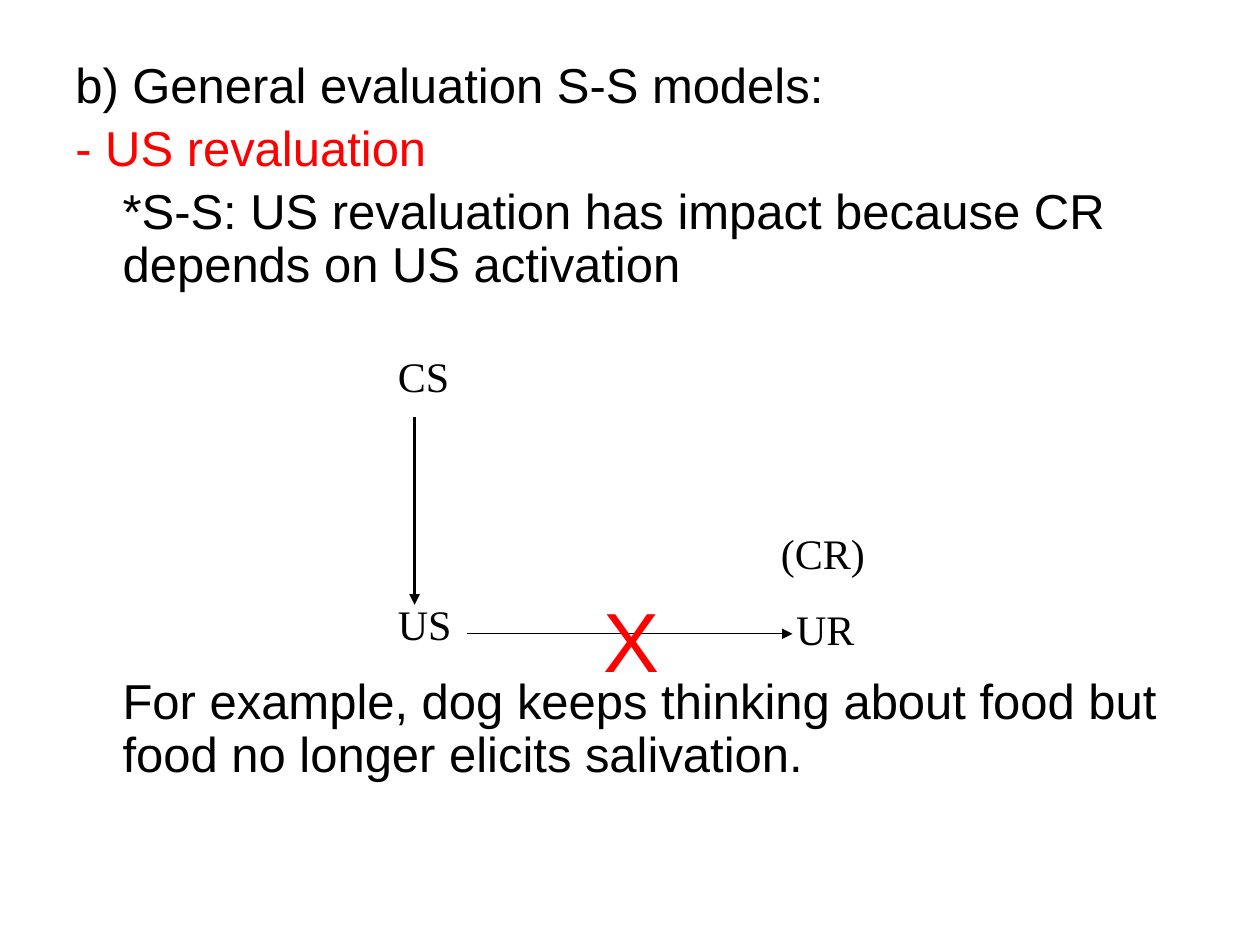
from pptx import Presentation
from pptx.dml.color import RGBColor
from pptx.enum.shapes import MSO_CONNECTOR
from pptx.oxml.ns import qn
from pptx.util import Pt
from lxml import etree

STRAIGHT = MSO_CONNECTOR.STRAIGHT
BLACK, RED = "000000", "FF0000"
SANS, SERIF = "Arial", "Times New Roman"


def add_box(left, top, width, height):
    tf = s.shapes.add_textbox(Pt(left), Pt(top), Pt(width), Pt(height)).text_frame
    tf.word_wrap = True
    return tf


def add_run(p, text, size, font, color):
    r = p.add_run()
    r.text = text
    r.font.size = Pt(size)
    r.font.name = font
    r.font.color.rgb = RGBColor.from_string(color)


prs = Presentation()
prs.slide_width, prs.slide_height = Pt(720), Pt(540)
s = prs.slides.add_slide(prs.slide_layouts[6])

# Body text: text, colour, first-line indent, space before (the last leaves room for the diagram)
body = [
    ("b) General evaluation S-S models:", BLACK, -27, 0),
    ("- US revaluation", RED, -27, 5.6),
    ("*S-S: US revaluation has impact because CR depends on US activation", BLACK, 0, 5.6),
    ("For example, dog keeps thinking about food but food no longer elicits salivation.",
     BLACK, 0, 219.5),
]
tf = add_box(36, 31.5, 669.6, 450.7)
for i, (text, color, indent, before) in enumerate(body):
    p = tf.add_paragraph() if i else tf.paragraphs[0]
    p.line_spacing = 0.9
    p.space_before = Pt(before)
    pPr = p._p.get_or_add_pPr()
    pPr.set("marL", str(Pt(27)))
    pPr.set("indent", str(Pt(indent)))
    add_run(p, text, 28, SANS, color)

# Arrows: start, end, line width
for x1, y1, x2, y2, width in [
    (236.9, 238.3, 236.9, 345.6, 2),
    (267.1, 362.2, 452.9, 362.2, 0.75),
]:
    arrow = s.shapes.add_connector(STRAIGHT, Pt(x1), Pt(y1), Pt(x2), Pt(y2))
    arrow.line.color.rgb = RGBColor.from_string(BLACK)
    arrow.line.width = Pt(width)
    etree.SubElement(arrow.line._get_or_add_ln(), qn("a:tailEnd"), type="triangle")
    etree.SubElement(arrow._element.spPr, qn("a:effectLst"))

# Diagram labels: text, left, top, width, height, size, font, colour
for text, left, top, width, height, size, font, color in [
    ("CS", 220.3, 196.6, 64, 61, 24, SERIF, BLACK),
    ("US", 220.3, 338.4, 64, 61, 24, SERIF, BLACK),
    ("UR", 447.8, 341.4, 82, 47, 24, SERIF, BLACK),
    ("(CR)", 439.2, 298, 102, 61, 24, SERIF, BLACK),
    ("X", 337.7, 332.6, 46.8, 64.8, 48, SANS, RED),
]:
    tf = add_box(left, top, width, height)
    add_run(tf.paragraphs[0], text, size, font, color)

prs.save("out.pptx")
